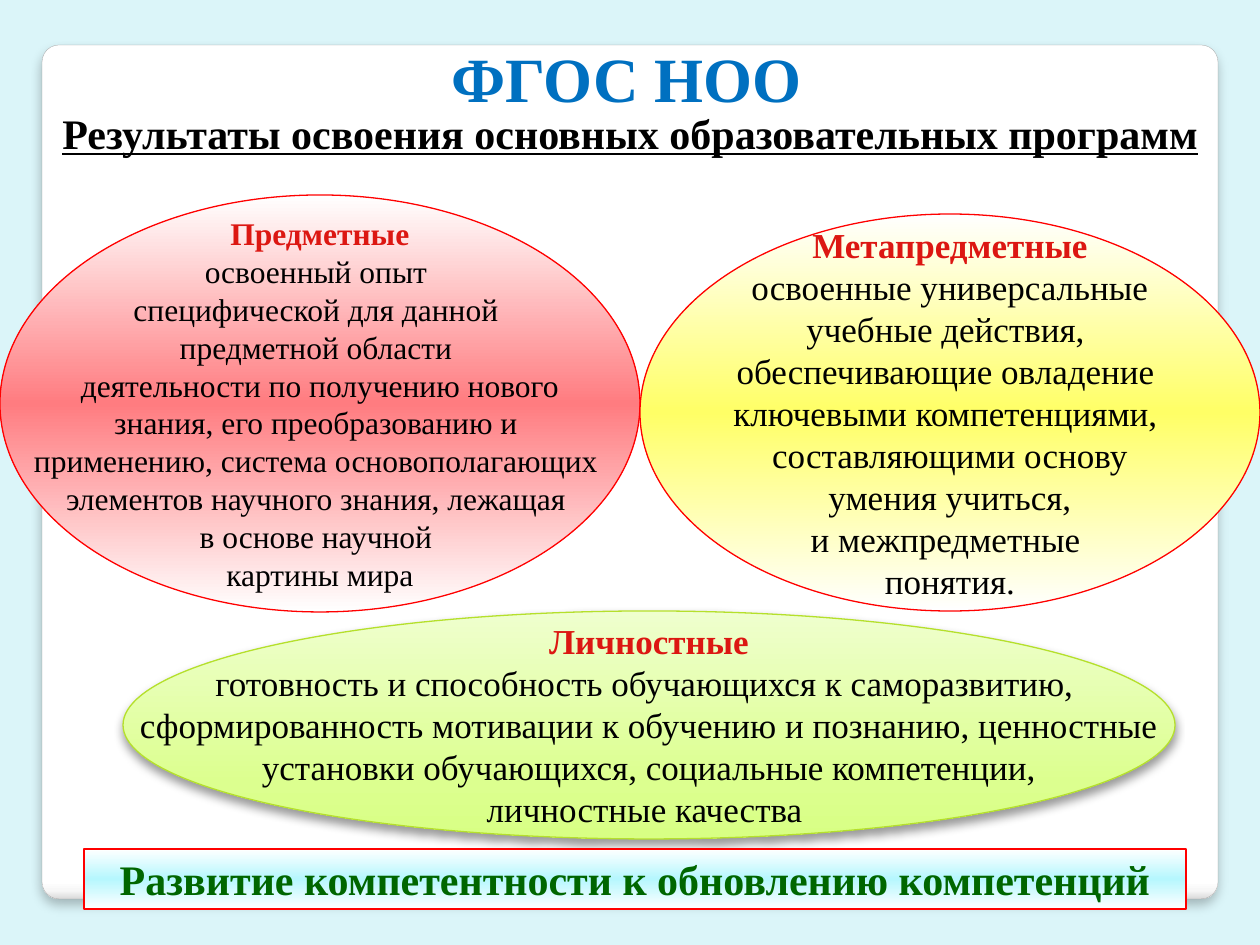
from lxml import etree
from pptx import Presentation, util as u
from pptx.dml.color import RGBColor
from pptx.enum import shapes, text
from pptx.oxml.ns import qn

THEME = {
    "font": "Times New Roman",
    "page": "DBF5F9",
    "title": "0070C0",
    "heading": "DC1712",
    "body": "000000",
    "banner": "006600",
    "outline": "FF0000",
    "leaf": "B5E02B",
    "card_edge": "A4A4A4",
    "card": [(0, "FFFFFF"), (98, "FFFFFF"), (99, "F7F7F7"), (100, "DADADA")],
    "red": [(0, "FFFFFF"), (50, "FF7C80"), (100, "FFFFFF")],
    "yellow": [(0, "FFFFFF"), (50, "FFFF66"), (100, "FFFFFF")],
    "green": [(0, "EFFFCE"), (75, "DCFF8F"), (100, "D8FF84")],
    "cyan": [(0, "FFFFFF"), (50, "B6F7FE"), (100, "FFFFFF")],
    "title_size": 36,
    "strong_size": 24,
    "large_size": 20,
    "small_size": 18,
}
PX = u.Inches(1) / 126
LEADING = 1.2


def add_panel(kind, box, stops, edge, width=0.75, shadow=None):
    panel = slide.shapes.add_shape(kind, *[round(v * PX) for v in box])
    panel.shadow.inherit = False
    panel.fill.gradient()
    panel.fill.gradient_angle = 270
    properties = panel._element.spPr
    stop_list = properties.find(qn("a:gradFill")).find(qn("a:gsLst"))
    for stop in list(stop_list):
        stop_list.remove(stop)
    for position, color in stops:
        stop = etree.SubElement(stop_list, qn("a:gs"), pos=str(position * 1000))
        etree.SubElement(stop, qn("a:srgbClr"), val=color)
    panel.line.color.rgb = RGBColor.from_string(edge)
    panel.line.width = u.Pt(width)
    if shadow:
        opacity, blur, distance = shadow
        outer = etree.SubElement(
            properties.find(qn("a:effectLst")), qn("a:outerShdw"),
            blurRad=str(u.Pt(blur)), dist=str(u.Pt(distance)),
            dir="5400000", algn="ctr", rotWithShape="0")
        color = etree.SubElement(outer, qn("a:srgbClr"), val="000000")
        etree.SubElement(color, qn("a:alpha"), val=str(opacity * 1000))
    return panel


def write_lines(shape, lines, size, first, rest=None, wrap=False, **extra):
    frame = shape.text_frame
    frame.word_wrap = wrap
    frame.auto_size = text.MSO_AUTO_SIZE.NONE
    frame.vertical_anchor = text.MSO_ANCHOR.MIDDLE
    for index, line in enumerate(lines):
        paragraph = frame.add_paragraph() if index else frame.paragraphs[0]
        paragraph.alignment = text.PP_ALIGN.CENTER
        paragraph.line_spacing = u.Pt(size * LEADING)
        paragraph.space_before = u.Pt(0)
        run = paragraph.add_run()
        run.text = line
        formats = {"name": THEME["font"], "size": u.Pt(size), "bold": index == 0, **extra}
        for name, value in formats.items():
            setattr(run.font, name, value)
        run.font.color.rgb = RGBColor.from_string(rest if index else first)


presentation = Presentation()
presentation.slide_width = u.Inches(10)
presentation.slide_height = u.Inches(7.5)
slide = presentation.slides.add_slide(presentation.slide_layouts[5])
slide.background.fill.solid()
slide.background.fill.fore_color.rgb = RGBColor.from_string(THEME["page"])

card = add_panel(shapes.MSO_SHAPE.ROUNDED_RECTANGLE, (42, 45, 1176, 854),
                 THEME["card"], THEME["card_edge"], 0.16, (25, 6, 4))
card.adjustments[0] = 0.02

results = [
    ((0, 195, 640, 417), "red", "outline", None, "small_size", [
        "Предметные",
        "освоенный опыт ",
        "специфической для данной ",
        "предметной области ",
        "деятельности по получению нового",
        "знания, его преобразованию и ",
        "применению, система основополагающих ",
        "элементов научного знания, лежащая ",
        "в основе научной ",
        "картины мира",
    ]),
    ((640, 214, 620, 397), "yellow", "outline", None, "large_size", [
        "Метапредметные",
        "освоенные универсальные",
        "учебные действия, ",
        "обеспечивающие овладение ",
        "ключевыми компетенциями, ",
        "составляющими основу",
        "умения учиться,",
        "и межпредметные ",
        "понятия.",
    ]),
    ((123, 611, 1052, 228), "green", "leaf", (40, 5.2, 3), "large_size", [
        "Личностные",
        "готовность и способность обучающихся к саморазвитию, ",
        "сформированность мотивации к обучению и познанию, ценностные",
        "установки обучающихся, социальные компетенции,",
        "личностные качества ",
    ]),
]
for box, fill, edge, shadow, size, lines in results:
    ellipse = add_panel(shapes.MSO_SHAPE.OVAL, box, THEME[fill], THEME[edge], shadow=shadow)
    write_lines(ellipse, lines, THEME[size], THEME["heading"], THEME["body"])

subtitle = slide.shapes.add_textbox(*[round(v * PX) for v in (35, 101, 1190, 63)])
write_lines(subtitle, ["Результаты освоения основных образовательных программ"],
            THEME["strong_size"], THEME["body"], wrap=True, underline=True)

banner = add_panel(shapes.MSO_SHAPE.RECTANGLE, (84, 849, 1102, 60),
                   THEME["cyan"], THEME["outline"])
write_lines(banner, ["Развитие компетентности к обновлению компетенций"],
            THEME["strong_size"], THEME["banner"])

title = slide.shapes.title
for name, value in {"left": 295, "top": 31, "width": 679, "height": 92}.items():
    setattr(title, name, round(value * PX))
write_lines(title, ["ФГОС НОО "], THEME["title_size"], THEME["title"], wrap=True)
title._element.addprevious(card._element)

presentation.save("out.pptx")
